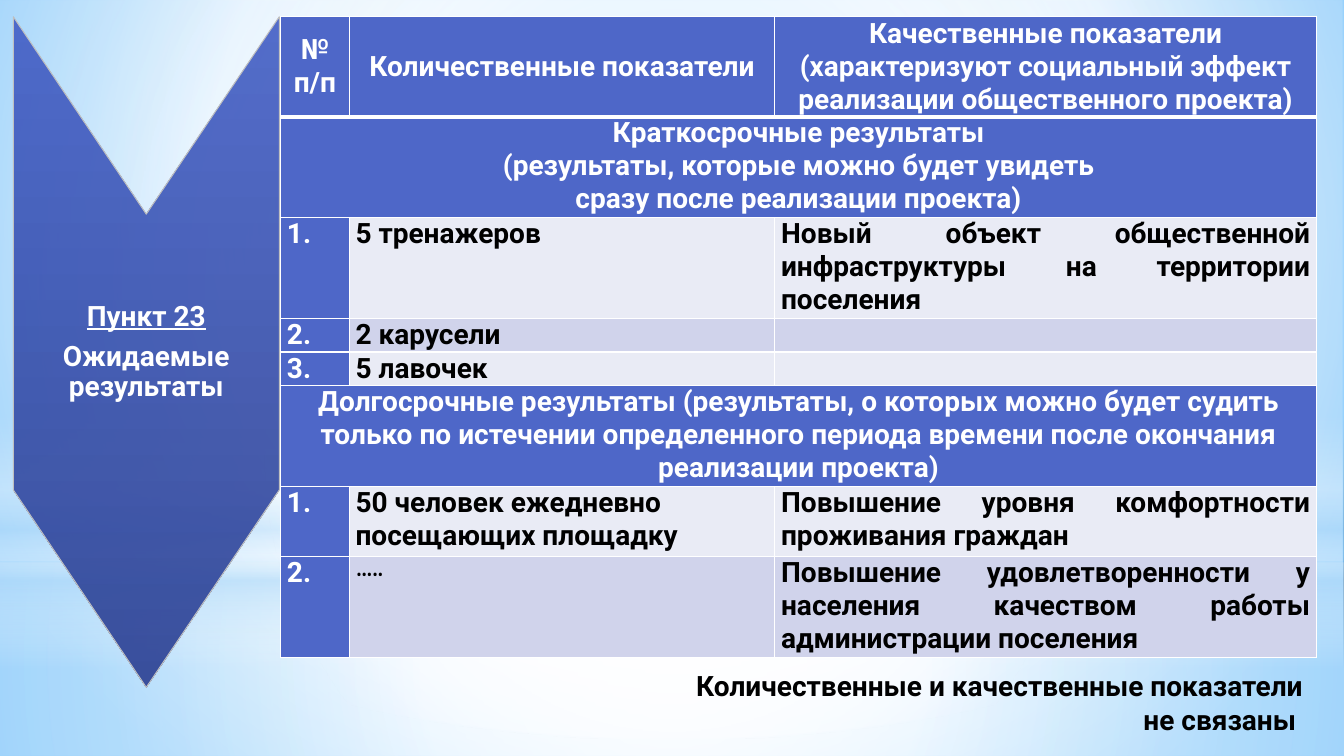
from pptx import Presentation
from pptx.dml.color import RGBColor
from pptx.enum.shapes import MSO_SHAPE
from pptx.enum.text import MSO_ANCHOR, PP_ALIGN
from pptx.oxml.ns import qn
from pptx.util import Pt
from lxml import etree

RECTANGLE, OVAL = MSO_SHAPE.RECTANGLE, MSO_SHAPE.OVAL
TOP, MIDDLE = MSO_ANCHOR.TOP, MSO_ANCHOR.MIDDLE
LEFT, CENTER, RIGHT, JUSTIFY = PP_ALIGN.LEFT, PP_ALIGN.CENTER, PP_ALIGN.RIGHT, PP_ALIGN.JUSTIFY

WHITE = RGBColor(0xFF, 0xFF, 0xFF)
BLACK = RGBColor(0, 0, 0)
SKY = RGBColor(0x9E, 0xD5, 0xFF)
DEEP_SKY = RGBColor(0x5B, 0xB9, 0xFF)
MIST = RGBColor(0xB4, 0xDC, 0xFA)
BLUE = RGBColor(0x4E, 0x67, 0xC8)
ARROW_TOP = RGBColor(0x43, 0x5E, 0xC5)
ARROW_BOTTOM = RGBColor(0x2B, 0x40, 0x92)
ARROW_EDGE = RGBColor(0xBF, 0xBF, 0xBF)
BANDS = RGBColor(0xE9, 0xEB, 0xF5), RGBColor(0xD0, 0xD3, 0xEB)

SLIDE_W, SLIDE_H = 960, 540
COLUMN_WIDTHS = 49, 304, 387
ROW_HEIGHTS = 72, 72, 72, 24, 24, 72, 50, 72
HEADINGS = [
    ["№ п/п"],
    ["Количественные показатели"],
    ["Качественные показатели",
     "(характеризуют социальный эффект реализации общественного проекта)"],
]
SECTIONS = [
    (["Краткосрочные результаты",
      "(результаты, которые можно будет увидеть",
      "сразу после реализации проекта)"],
     [("5 тренажеров", "Новый объект общественной инфраструктуры на территории поселения"),
      ("2 карусели", ""),
      ("5 лавочек", "")]),
    (["Долгосрочные результаты (результаты, о которых можно будет судить только "
      "по истечении определенного периода времени после окончания реализации проекта)"],
     [("50 человек ежедневно посещающих площадку",
       "Повышение уровня комфортности проживания граждан"),
      ("…..",
       "Повышение удовлетворенности у населения качеством работы администрации поселения")]),
]


def write(frame, lines, color=BLACK, align=LEFT, size=20, font="Roboto",
          spacing=None, after=0, underlined=None):
    """Fill a text frame with bold paragraphs; underlined is the index of one of them."""
    frame.word_wrap = True
    for index, line in enumerate(lines):
        paragraph = frame.paragraphs[0] if index == 0 else frame.add_paragraph()
        paragraph.alignment = align
        paragraph.line_spacing = spacing
        paragraph.space_after = Pt(after)
        run = paragraph.add_run()
        run.text = line
        run.font.name, run.font.size, run.font.bold = font, Pt(size), True
        run.font.color.rgb = color
        run.font.underline = index == underlined


def add_color(parent, color, opacity=100):
    srgb = etree.SubElement(parent, qn("a:srgbClr"), val=str(color))
    if opacity < 100:
        etree.SubElement(srgb, qn("a:alpha"), val=str(opacity * 1000))


def paint_gradient(fill, owner, stops, focus=None):
    """Radial gradient around the focus insets (l, t, r, b), or top to bottom without them."""
    fill.gradient()
    gradient = next(owner.iter(qn("a:gradFill")))
    for child in list(gradient):
        gradient.remove(child)
    stop_list = etree.SubElement(gradient, qn("a:gsLst"))
    for position, color, opacity in stops:
        stop = etree.SubElement(stop_list, qn("a:gs"), pos=str(position * 1000))
        add_color(stop, color, opacity)
    if focus:
        circle = etree.SubElement(gradient, qn("a:path"), path="circle")
        insets = {side: str(inset * 1000) for side, inset in zip("ltrb", focus)}
        etree.SubElement(circle, qn("a:fillToRect"), **insets)
    else:
        etree.SubElement(gradient, qn("a:lin"), ang="5400000", scaled="0")


def draw_background(slide, width, height):
    paint_gradient(slide.background.fill, slide.element,
                   [(0, SKY, 100), (60, WHITE, 100), (100, DEEP_SKY, 100)], (20, 10, 20, 60))
    center = (50, 50, 50, 50)
    horizon = 402
    veils = [
        (RECTANGLE, horizon, height - horizon,
         [(0, WHITE, 91), (37, WHITE, 76), (100, MIST, 79)], center),
        (RECTANGLE, 0, horizon, [(0, WHITE, 89), (48, WHITE, 62), (100, MIST, 79)], center),
        (RECTANGLE, 297, 180,
         [(0, WHITE, 0), (29, WHITE, 30), (45, MIST, 40), (55, WHITE, 26),
          (65, MIST, 60), (100, WHITE, 0)], None),
        (OVAL, 126, horizon, [(0, WHITE, 100), (56, WHITE, 0)], center),
    ]
    for kind, top, veil_height, stops, focus in veils:
        veil = slide.shapes.add_shape(kind, 0, Pt(top), Pt(width), Pt(veil_height))
        veil.shadow.inherit = False
        veil.line.fill.background()
        paint_gradient(veil.fill, veil.element, stops, focus)


def draw_arrow(slide, left, top, width, height):
    notch = 141
    middle, right = left + width / 2, left + width
    shoulder, bottom = top + height - notch, top + height
    outline = [(right, shoulder), (middle, bottom), (left, shoulder), (left, top),
               (middle, top + notch)]
    builder = slide.shapes.build_freeform(Pt(right), Pt(top))
    builder.add_line_segments([(Pt(x), Pt(y)) for x, y in outline], close=True)
    arrow = builder.convert_to_shape()
    arrow.shadow.inherit = False
    paint_gradient(arrow.fill, arrow.element, [(0, ARROW_TOP, 90), (100, ARROW_BOTTOM, 90)])
    arrow.line.color.rgb, arrow.line.width = ARROW_EDGE, Pt(0.75)
    frame = arrow.text_frame
    frame.vertical_anchor = MIDDLE
    frame.margin_left = frame.margin_right = Pt(1.5)
    frame.margin_top = frame.margin_bottom = Pt(131)
    write(frame, ["Пункт 23", "Ожидаемые результаты"], color=WHITE, align=CENTER,
          spacing=0.9, after=7, underlined=0)


def set_borders(cell, top=1, bottom=1):
    properties = cell._tc.get_or_add_tcPr()
    for index, (side, width) in enumerate(zip("LRTB", (1, 1, top, bottom))):
        border = etree.Element(qn(f"a:ln{side}"), w=str(Pt(width)))
        add_color(etree.SubElement(border, qn("a:solidFill")), WHITE)
        properties.insert(index, border)


def fill_cell(cell, lines, background, anchor=TOP, **text_format):
    cell.fill.solid()
    cell.fill.fore_color.rgb = background
    cell.margin_left = cell.margin_right = Pt(4.5)
    cell.margin_top = cell.margin_bottom = 0
    cell.vertical_anchor = anchor
    write(cell.text_frame, lines, **text_format)


def draw_results_table(slide, left, top):
    table = slide.shapes.add_table(
        len(ROW_HEIGHTS), len(COLUMN_WIDTHS), Pt(left), Pt(top),
        Pt(sum(COLUMN_WIDTHS)), Pt(sum(ROW_HEIGHTS))).table
    for column, width in zip(table.columns, COLUMN_WIDTHS):
        column.width = Pt(width)
    for row, height in zip(table.rows, ROW_HEIGHTS):
        row.height = Pt(height)

    for column, heading in enumerate(HEADINGS):
        fill_cell(table.cell(0, column), heading, BLUE, MIDDLE, color=WHITE, align=CENTER)
    row = 1
    for title, results in SECTIONS:
        table.cell(row, 0).merge(table.cell(row, 2))
        fill_cell(table.cell(row, 0), title, BLUE, color=WHITE, align=CENTER)
        for index, (quantity, quality) in enumerate(results):
            row += 1
            band = BANDS[index % 2]
            dots = {"font": "Cambria", "size": 16} if quantity == "….." else {}
            fill_cell(table.cell(row, 0), [f"{index + 1}."], BLUE, color=WHITE)
            fill_cell(table.cell(row, 1), [quantity], band, **dots)
            fill_cell(table.cell(row, 2), [quality], band, align=JUSTIFY)
        row += 1

    for row in range(len(ROW_HEIGHTS)):
        for column in range(len(COLUMN_WIDTHS)):
            set_borders(table.cell(row, column), top=3 if row == 1 else 1,
                        bottom=3 if row == 0 else 1)


def draw_remark(slide, left, top, width, height):
    remark = slide.shapes.add_textbox(Pt(left), Pt(top), Pt(width), Pt(height))
    write(remark.text_frame, ["Количественные и качественные показатели", "не связаны "],
          align=RIGHT)


def main():
    deck = Presentation()
    deck.slide_width, deck.slide_height = Pt(SLIDE_W), Pt(SLIDE_H)
    slide = deck.slides.add_slide(deck.slide_layouts[6])
    draw_background(slide, SLIDE_W, SLIDE_H)
    draw_arrow(slide, 9.5, 12, 190, 479)
    draw_results_table(slide, 200.5, 11.5)
    draw_remark(slide, 400, 474, 538, 55.5)
    deck.save("out.pptx")


if __name__ == "__main__":
    main()
